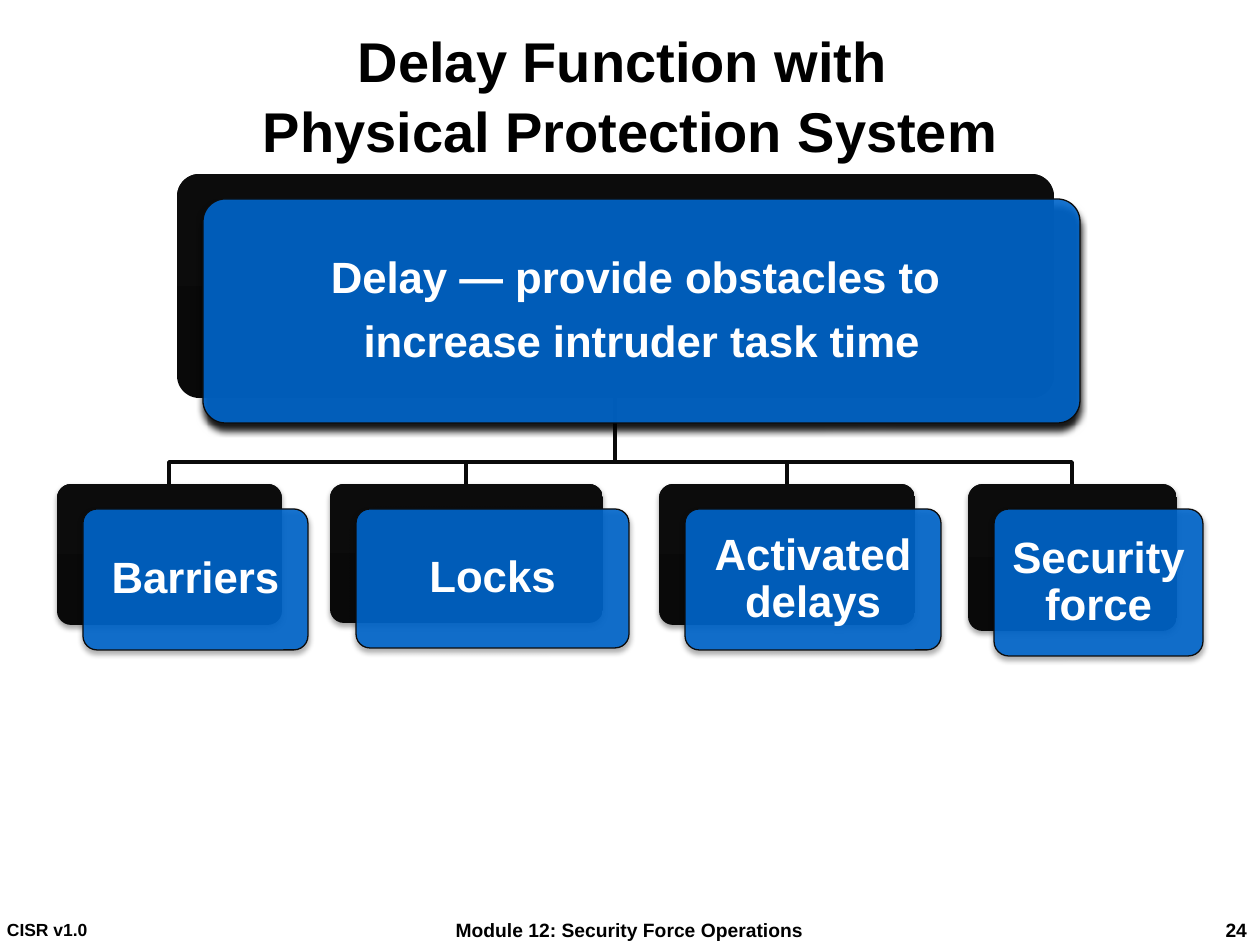
from lxml.etree import SubElement
from pptx import Presentation
from pptx.dml.color import RGBColor
from pptx.enum.shapes import MSO_SHAPE
from pptx.enum.text import MSO_ANCHOR, MSO_AUTO_SIZE, PP_ALIGN
from pptx.oxml.ns import qn
from pptx.util import Pt

PX = 914400 / 126
BLACK, WHITE, BLUE, EDGE, LINE = "000000", "FFFFFF", "0066CC", "0C0C0C", "0A0A0A"
SHIFT = 26, 25
SOFT, HARD = (35, 3.1, 1.8), (100, 4, 4)
ROOT = (177, 174, 877, 224)
TOP, BEND = 484, 462
LEAVES = [
    ("Barriers", 57, 225, 141),
    ("Locks", 330, 273, 139),
    ("Activated delays", 659, 256, 141),
    ("Security force", 968, 209, 147),
]
FOOTS = [
    ("Module 12: Security Force Operations", (409, 914, 441, 31), 11, PP_ALIGN.CENTER, 12),
    ("CISR v1.0", (6, 914, 391, 31), 10, PP_ALIGN.LEFT, 1),
    ("24", (1203, 914, 56, 31), 11, PP_ALIGN.RIGHT, 12),
]


def emu(*nums):
    """Turn px lengths into EMU."""
    return [round(n * PX) for n in nums]


def rgb(code):
    """Turn a hex string into a colour."""
    return RGBColor.from_string(code)


def write(shape, text, size, color=BLACK, align=PP_ALIGN.CENTER, pad=(1, 1), lead=None, after=None):
    """Fill a shape with bold text; a newline starts a paragraph, a \\v breaks a line."""
    frame = shape.text_frame
    frame.word_wrap = True
    frame.auto_size = MSO_AUTO_SIZE.NONE
    frame.vertical_anchor = MSO_ANCHOR.MIDDLE
    frame.margin_left, frame.margin_top = emu(*pad)
    frame.margin_right, frame.margin_bottom = emu(*pad)
    frame.text = text
    for para in frame.paragraphs:
        para.alignment = align
        para.line_spacing = lead
        para.space_after = after
        for run in para.runs:
            font = run.font
            font.name, font.size, font.bold = "Arial", Pt(size), True
            font.color.rgb = rgb(color)
        for gap in para._p.findall(qn("a:br")):
            SubElement(gap, qn("a:rPr"), sz=str(size * 100))


def shade(shape, alpha, blur, dist):
    """Drop a black shadow straight down."""
    host = shape._element.spPr.find(qn("a:effectLst"))
    drop = SubElement(host, qn("a:outerShdw"), blurRad=str(Pt(blur)), dist=str(Pt(dist)),
                      dir="5400000", algn="ctr", rotWithShape="0")
    tint = SubElement(drop, qn("a:srgbClr"), val=BLACK)
    SubElement(tint, qn("a:alpha"), val=str(alpha * 1000))


def plate(slide, box):
    """Add a bare rounded plate."""
    shape = slide.shapes.add_shape(MSO_SHAPE.ROUNDED_RECTANGLE, *emu(*box))
    shape.adjustments[0] = 0.1
    shape.shadow.inherit = False
    return shape


def card(slide, box, text, back=SOFT, front=SOFT):
    """Draw a dark plate with a blue, labelled plate shifted over it."""
    x, y, w, h = box
    base = plate(slide, box)
    base.fill.gradient()
    base.fill.gradient_angle = 90
    for stop, tone in zip(base.fill.gradient_stops, ("090909", EDGE)):
        stop.color.rgb = rgb(tone)
    base.line.fill.background()
    if back:
        shade(base, *back)
    face = plate(slide, (x + SHIFT[0], y + SHIFT[1], w, h))
    face.fill.solid()
    face.fill.fore_color.rgb = rgb(BLUE)
    tint = face._element.spPr.find(qn("a:solidFill")).find(qn("a:srgbClr"))
    SubElement(tint, qn("a:alpha"), val="90000")
    face.line.color.rgb = rgb(EDGE)
    face.line.width = Pt(0.75)
    shade(face, *front)
    write(face, text, 25, color=WHITE, pad=(12, 12), lead=0.9, after=Pt(9.5))


def branch(slide, start, end):
    """Draw a bent line from the root down to a leaf."""
    pen = slide.shapes.build_freeform(*start, scale=PX)
    pen.add_line_segments([(start[0], BEND), (end[0], BEND), end], close=False)
    path = pen.convert_to_shape()
    path.shadow.inherit = False
    path.fill.background()
    path.line.color.rgb = rgb(LINE)
    path.line.width = Pt(2)


def head(slide, box):
    """Place and format the title."""
    title = slide.shapes.title
    title.left, title.top, title.width, title.height = emu(*box)
    write(title, "Delay Function with \vPhysical Protection System", 32, lead=1.04)


def tree(slide, root):
    """Draw the root card, its branches and the leaf cards."""
    x, y, w, h = root
    for _, left, wide, _ in reversed(LEAVES):
        branch(slide, (x + w // 2, y + h), (left + wide // 2, TOP))
    card(slide, root, "Delay — provide obstacles to \nincrease intruder task time",
         back=None, front=HARD)
    for text, left, wide, high in LEAVES:
        card(slide, (left, TOP, wide, high), text)


def foot(slide):
    """Write the three footer texts."""
    for text, box, size, align, side in FOOTS:
        note = slide.shapes.add_textbox(*emu(*box))
        write(note, text, size, align=align, pad=(side, 1))


def main():
    """Build and save the deck."""
    deck = Presentation()
    deck.slide_width, deck.slide_height = emu(1260, 945)
    slide = deck.slides.add_slide(deck.slide_layouts[5])
    head(slide, (57, 31, 1147, 126))
    foot(slide)
    tree(slide, ROOT)
    deck.save("out.pptx")


if __name__ == "__main__":
    main()
